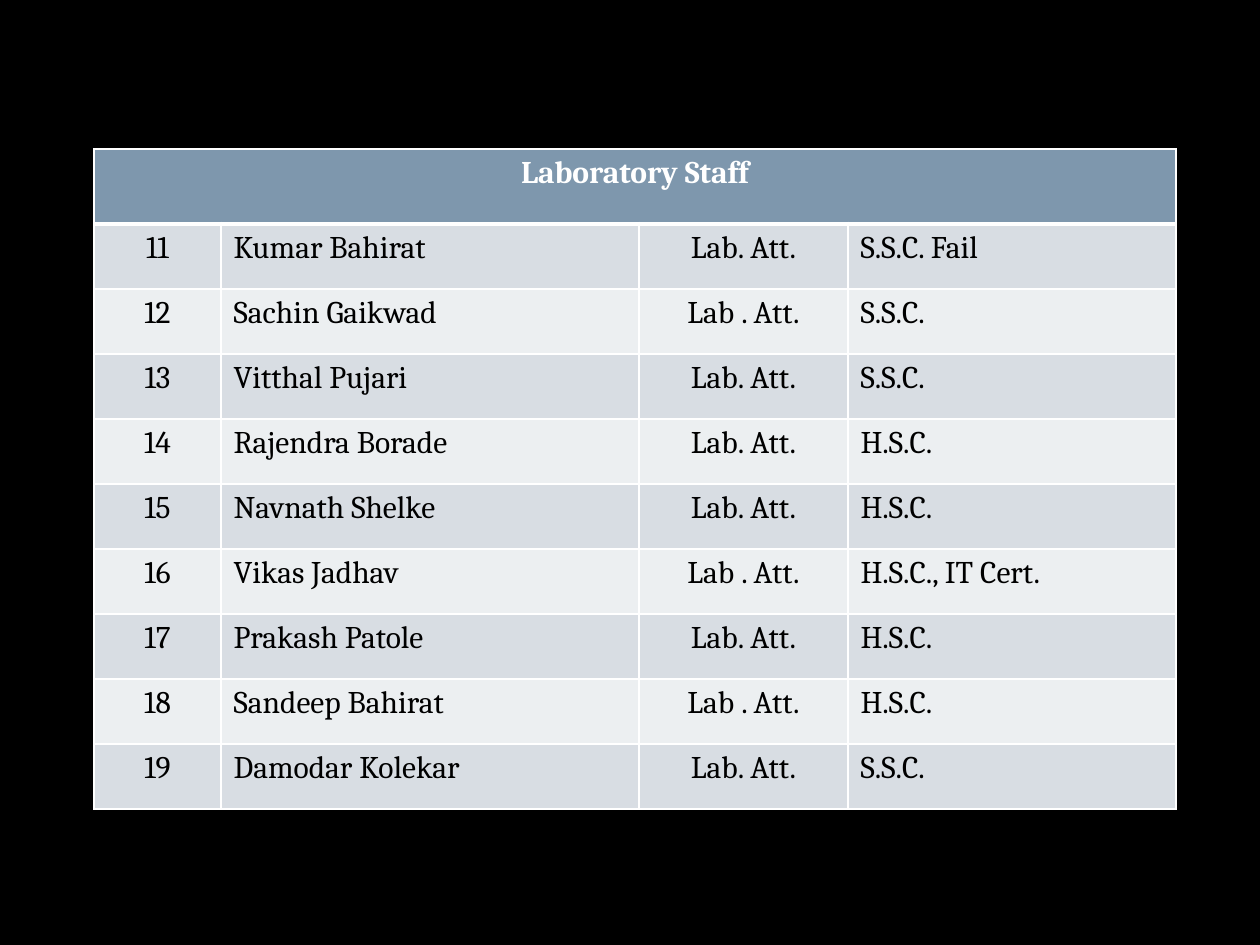
"""Build a slide with a table of laboratory staff."""
from lxml.etree import SubElement
from pptx import Presentation
from pptx.dml.color import RGBColor
from pptx.enum.text import PP_ALIGN
from pptx.oxml.ns import qn
from pptx.util import Pt

PX = 914400 / 126
COLORS = {
    "page": "000000",
    "header": "7E97AD",
    "odd": "D8DDE3",
    "even": "ECEFF1",
    "line": "FFFFFF",
    "heading": "FFFFFF",
    "text": "000000",
}
COLUMN_WIDTHS = [127, 418, 209, 328]
HEADER_HEIGHT, ROW_HEIGHT = 75, 65
STAFF = [
    ("11", "Kumar Bahirat", "Lab. Att.", "S.S.C. Fail"),
    ("12", "Sachin Gaikwad", "Lab . Att.", "S.S.C."),
    ("13", "Vitthal Pujari", "Lab. Att.", "S.S.C."),
    ("14", "Rajendra Borade", "Lab. Att.", "H.S.C."),
    ("15", "Navnath Shelke", "Lab. Att.", "H.S.C."),
    ("16", "Vikas Jadhav", "Lab . Att.", "H.S.C., IT Cert."),
    ("17", "Prakash Patole", "Lab. Att.", "H.S.C."),
    ("18", "Sandeep Bahirat", "Lab . Att.", "H.S.C."),
    ("19", "Damodar Kolekar", "Lab. Att.", "S.S.C."),
]


def px(length):
    return round(length * PX)


def style_cell(cell, fill, top, bottom):
    properties = cell._tc.get_or_add_tcPr()
    for side, width in (("L", 1), ("R", 1), ("T", top), ("B", bottom)):
        line = SubElement(properties, qn(f"a:ln{side}"), w=str(Pt(width)))
        solid = SubElement(line, qn("a:solidFill"))
        SubElement(solid, qn("a:srgbClr"), val=COLORS["line"])
    cell.fill.solid()
    cell.fill.fore_color.rgb = RGBColor.from_string(COLORS[fill])


deck = Presentation()
deck.slide_width, deck.slide_height = px(1260), px(945)
page = deck.slides.add_slide(deck.slide_layouts[6])
page.background.fill.solid()
page.background.fill.fore_color.rgb = RGBColor.from_string(COLORS["page"])

rows = [("Laboratory Staff", "", "", "")] + STAFF
table_height = HEADER_HEIGHT + ROW_HEIGHT * len(STAFF)
table = page.shapes.add_table(
    len(rows), len(COLUMN_WIDTHS), px(94), px(149), px(sum(COLUMN_WIDTHS)), px(table_height)
).table
for column, width in zip(table.columns, COLUMN_WIDTHS):
    column.width = px(width)

for row_number, values in enumerate(rows):
    is_header = row_number == 0
    table.rows[row_number].height = px(HEADER_HEIGHT if is_header else ROW_HEIGHT)
    fill = "header" if is_header else "odd" if row_number % 2 else "even"
    for column_number, value in enumerate(values):
        cell = table.cell(row_number, column_number)
        style_cell(cell, fill, 3 if row_number == 1 else 1, 3 if is_header else 1)
        if not value:
            continue
        cell.text_frame.text = value
        paragraph = cell.text_frame.paragraphs[0]
        centered = is_header or column_number in (0, 2)
        paragraph.alignment = PP_ALIGN.CENTER if centered else PP_ALIGN.LEFT
        font = paragraph.runs[0].font
        font.name, font.size, font.bold = "Cambria", Pt(18), is_header
        font.color.rgb = RGBColor.from_string(COLORS["heading" if is_header else "text"])

table.cell(0, 0).merge(table.cell(0, len(COLUMN_WIDTHS) - 1))

deck.save("out.pptx")
